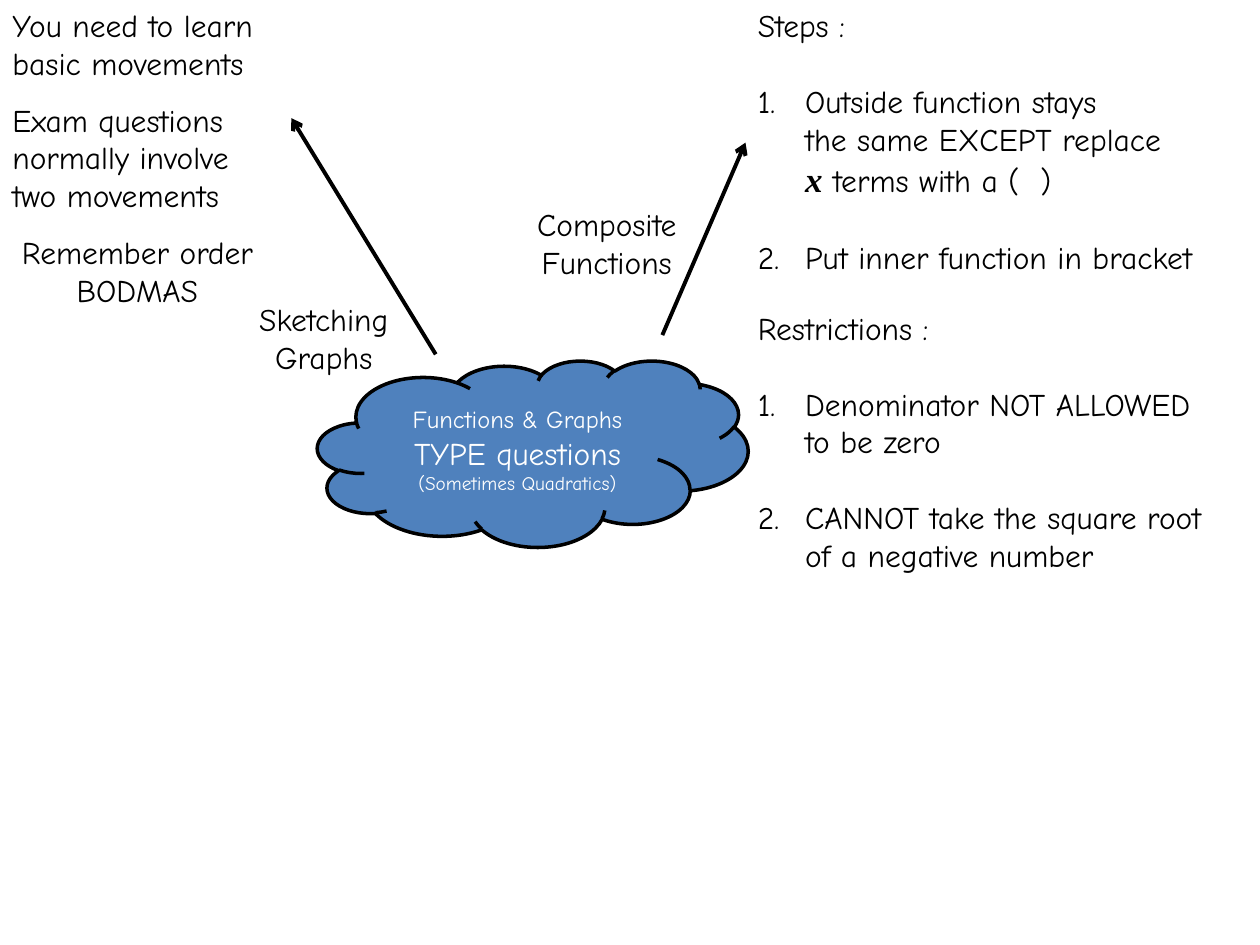
from lxml import etree
from pptx import Presentation
from pptx.dml.color import RGBColor
from pptx.enum.shapes import MSO_CONNECTOR, MSO_SHAPE
from pptx.enum.text import MSO_ANCHOR, PP_ALIGN
from pptx.oxml.ns import qn
from pptx.util import Pt

STRAIGHT = MSO_CONNECTOR.STRAIGHT
CLOUD = MSO_SHAPE.CLOUD
MIDDLE, TOP = MSO_ANCHOR.MIDDLE, MSO_ANCHOR.TOP
LEFT, CENTER = PP_ALIGN.LEFT, PP_ALIGN.CENTER

COLORS = {"ink": "000000", "cloud": "4F81BD", "white": "FFFFFF"}
FONT, MATH_FONT = "Comic Neue", "Times New Roman"
HANG = 27
BLANK_LINE = 21.7

prs = Presentation()
prs.slide_width, prs.slide_height = Pt(720), Pt(540)
s = prs.slides.add_slide(prs.slide_layouts[6])


def add_text(p, text, size=18, color="ink", font=FONT, bold=False, italic=False):
    r = p.add_run()
    r.text = text
    r.font.name, r.font.size = font, Pt(size)
    r.font.bold, r.font.italic = bold, italic
    r.font.color.rgb = RGBColor.from_string(COLORS[color])


def indent(p, number=None):
    """Indent a list line; a number makes it the first line of that item."""
    pPr = p._p.get_or_add_pPr()
    pPr.set("marL", str(Pt(HANG)))
    pPr.set("indent", str(-Pt(HANG) if number else 0))
    if number:
        etree.SubElement(pPr, qn("a:buFont"), typeface="+mj-lt")
        etree.SubElement(pPr, qn("a:buAutoNum"), type="arabicPeriod", startAt=str(number))


# Central cloud
sp = s.shapes.add_shape(CLOUD, Pt(181.5), Pt(206), Pt(246), Pt(106.5))
sp.shadow.inherit = False
sp.fill.solid()
sp.fill.fore_color.rgb = RGBColor.from_string(COLORS["cloud"])
sp.line.color.rgb = RGBColor.from_string(COLORS["ink"])
sp.line.width = Pt(2)
tf = sp.text_frame
tf.word_wrap, tf.vertical_anchor = True, MIDDLE
topic = [("Functions & Graphs", 14), ("TYPE questions", 18), ("(Sometimes Quadratics)", 11)]
for i, (text, size) in enumerate(topic):
    p = tf.add_paragraph() if i else tf.paragraphs[0]
    p.alignment = CENTER
    add_text(p, text, size=size, color="white")

# Arrows from the cloud to the notes
for x1, y1, x2, y2 in [(249, 202.5, 166.5, 67.5), (378.5, 191.5, 426, 81.5)]:
    cn = s.shapes.add_connector(STRAIGHT, Pt(x1), Pt(y1), Pt(x2), Pt(y2))
    cn.line.color.rgb = RGBColor.from_string(COLORS["ink"])
    cn.line.width = Pt(2.25)
    etree.SubElement(cn.line._get_or_add_ln(), qn("a:tailEnd"), type="arrow")
    etree.SubElement(cn._element.spPr, qn("a:effectLst"))

# Branch labels and short notes
notes = [
    (135.5, 168, 99, 51, CENTER, ["Sketching", "Graphs"]),
    (281.5, 113.5, 130.5, 51, CENTER, ["Composite", "Functions"]),
    (0, 0, 168, 51, LEFT, ["You need to learn", "basic movements"]),
    (0, 54, 152.5, 72.5, LEFT, ["Exam questions", "normally involve", "two movements"]),
    (0, 129.5, 157, 51, CENTER, ["Remember order", "BODMAS"]),
]
for x, y, w, h, align, lines in notes:
    tf = s.shapes.add_textbox(Pt(x), Pt(y), Pt(w), Pt(h)).text_frame
    tf.word_wrap, tf.vertical_anchor = True, TOP
    for i, line in enumerate(lines):
        p = tf.add_paragraph() if i else tf.paragraphs[0]
        p.alignment = align
        add_text(p, line)

# Numbered lists: each item is a list of lines
lists = [
    (0, 285, 163, "Steps :", [
        ["Outside function stays", "the same EXCEPT replace", "x terms with a (  )"],
        ["Put inner function in bracket"],
    ]),
    (173, 308, 160, "Restrictions :", [
        ["Denominator NOT ALLOWED", "to be zero"],
        ["CANNOT take the square root", "of a negative number"],
    ]),
]
for y, w, h, heading, items in lists:
    tf = s.shapes.add_textbox(Pt(426), Pt(y), Pt(w), Pt(h)).text_frame
    tf.word_wrap, tf.vertical_anchor = True, TOP
    add_text(tf.paragraphs[0], heading)
    for number, lines in enumerate(items, 1):
        for i, line in enumerate(lines):
            p = tf.add_paragraph()
            if i == 0:
                p.space_before = Pt(BLANK_LINE)
            indent(p, None if i else number)
            if line.startswith("x "):
                add_text(p, "x", size=20, font=MATH_FONT, bold=True, italic=True)
                line = line[1:]
            add_text(p, line)

prs.save("out.pptx")
